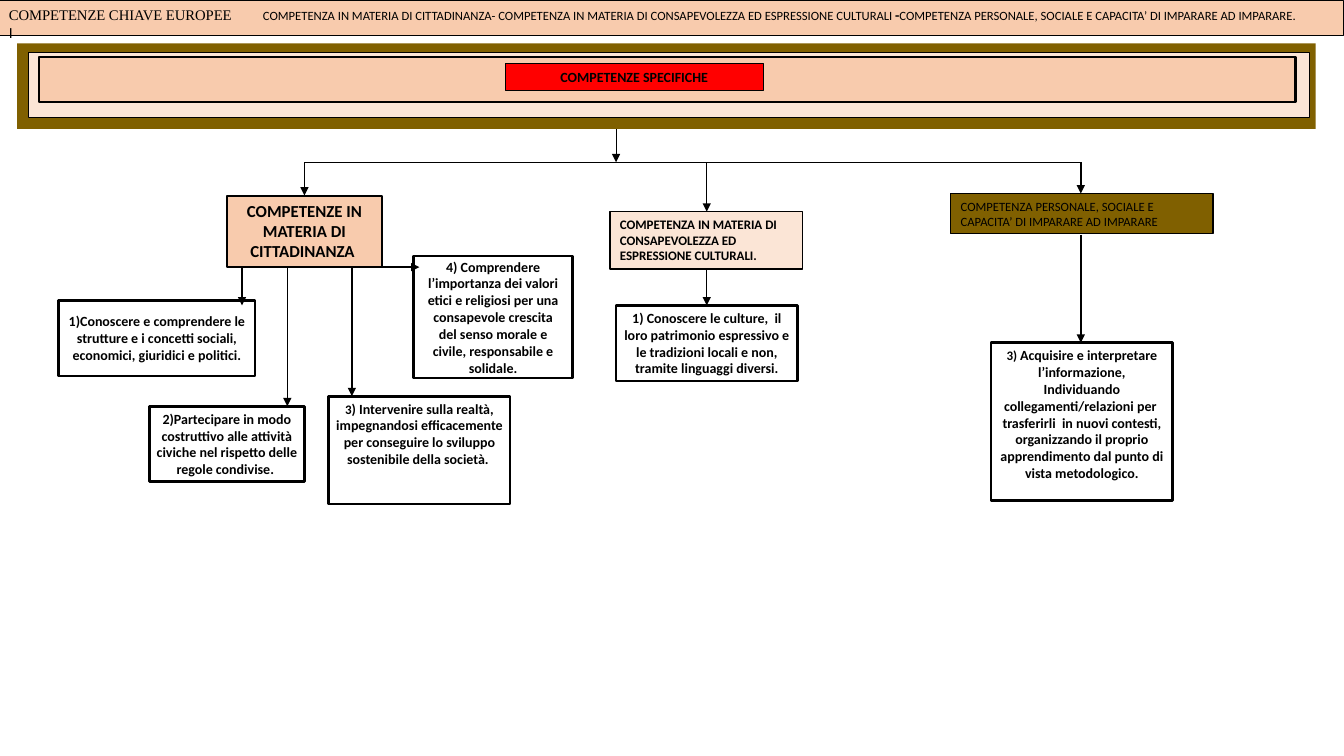
"""Build the slide mapping European key competences to specific competences."""
import pptx
import pptx.dml.color
import pptx.enum.shapes
import pptx.enum.text
import pptx.util
from lxml import etree
from pptx.oxml.ns import qn

Inches = pptx.util.Inches
ALIGN = pptx.enum.text.PP_ALIGN
ANCHOR = pptx.enum.text.MSO_ANCHOR

BLACK, WHITE, OLIVE, PEACH, CREAM, RED = "000000", "FFFFFF", "806000", "F8CBAD", "FBE5D6", "FF0000"
BOLD = {"bold": True, "size": 10}
SMALL_BOLD = {"bold": True, "size": 9.3}
PLAIN = {"size": 9}
NARROW = (0.07, 0.04)
WIDE = (0.1, 0.05)

BANNER = [
    [("COMPETENZE CHIAVE EUROPEE", {"size": 10.5, "name": "Times New Roman"}),
     ("\t", {"size": 11}),
     ("COMPETENZA IN MATERIA DI CITTADINANZA- COMPETENZA IN MATERIA DI CONSAPEVOLEZZA ED ESPRESSIONE CULTURALI", PLAIN),
     (" -", BOLD),
     ("COMPETENZA PERSONALE, SOCIALE E CAPACITA’ DI IMPARARE AD IMPARARE.", PLAIN)],
    [("I", {"size": 11})],
]
BANNER_TAB = 2.52

FRAMES = [
    ((0.17, 0.43, 12.88, 0.85), OLIVE, None),
    ((0.28, 0.52, 12.71, 0.65), CREAM, 0.75),
    ((0.39, 0.57, 12.46, 0.44), PEACH, 1.5),
]
TITLE = ((5.01, 0.63, 2.56, 0.27), RED, 0.75)
TITLE_TEXT = [[("COMPETENZE SPECIFICHE", BOLD)]]

AREAS = [
    ((2.25, 1.94, 1.54, 0.71), PEACH, 1.5, ALIGN.CENTER,
     [[("COMPETENZE IN MATERIA DI CITTADINANZA ", {"bold": True, "size": 12})]]),
    ((6.05, 2.1, 1.91, 0.57), CREAM, 1, ALIGN.LEFT,
     [[("COMPETENZA IN MATERIA DI CONSAPEVOLEZZA ED ESPRESSIONE CULTURALI.", SMALL_BOLD)]]),
    ((9.43, 1.92, 2.6, 0.4), OLIVE, 1, ALIGN.LEFT,
     [[("COMPETENZA PERSONALE, SOCIALE E CAPACITA’ DI IMPARARE AD IMPARARE", PLAIN)]]),
]

GOALS = [
    ((0.58, 2.98, 1.95, 0.75), WHITE, ANCHOR.MIDDLE, WIDE,
     [[("1)Conoscere e comprendere le strutture e i concetti sociali, economici, giuridici e politici.", BOLD)]]),
    ((1.48, 4.03, 1.54, 0.75), None, ANCHOR.TOP, NARROW,
     [[("2)Partecipare in modo costruttivo alle attività civiche nel rispetto delle regole condivise. ", BOLD)]]),
    ((3.26, 3.93, 1.8, 1.07), None, ANCHOR.TOP, NARROW,
     [[("3", SMALL_BOLD),
       (") Intervenire sulla realtà, impegnandosi efficacemente per conseguire lo sviluppo "
        "sostenibile della società. ", BOLD)]]),
    ((4.1, 2.54, 1.58, 1.21), WHITE, ANCHOR.MIDDLE, WIDE,
     [[("4) Comprendere l’importanza dei valori etici e religiosi per una consapevole crescita "
        "del senso morale e civile, responsabile e solidale.", BOLD)]]),
    ((6.11, 3.03, 1.8, 0.75), None, ANCHOR.TOP, NARROW,
     [[("1) Conoscere le culture,  il loro patrimonio espressivo e le tradizioni locali e non, "
        "tramite linguaggi diversi.", BOLD)]]),
    ((9.83, 3.4, 1.8, 1.57), None, ANCHOR.TOP, NARROW,
     [[("3) ", SMALL_BOLD), ("Acquisire e interpretare l’informazione,", BOLD)],
      [("Individuando collegamenti/relazioni per  trasferirli  in nuovi contesti,", BOLD)],
      [("organizzando il proprio apprendimento dal punto di vista metodologico.", BOLD)]]),
]

BUS, CIVIC_X, CULTURE_X, LEARNING_X, CIVIC_BOTTOM = 1.61, 3.02, 7.01, 10.72, 2.65
DROPS = [
    (6.11, 1.28, BUS, 0.5),
    (CIVIC_X, BUS, 1.94, 1),
    (CULTURE_X, BUS, 2.1, 1),
    (LEARNING_X, BUS, 1.92, 1),
    (CULTURE_X, 2.66, 3.03, 1),
    (LEARNING_X, 2.33, 3.4, 1.5),
    (2.4, CIVIC_BOTTOM, 3.03, 1.5),
    (2.85, CIVIC_BOTTOM, 4.03, 1),
    (3.49, CIVIC_BOTTOM, 3.93, 1.5),
]


def color(code):
    return pptx.dml.color.RGBColor.from_string(code)


def style_box(box, place, fill, weight):
    for name, value in zip(("left", "top", "width", "height"), place):
        setattr(box, name, Inches(value))
    box.shadow.inherit = False
    if fill:
        box.fill.solid()
        box.fill.fore_color.rgb = color(fill)
    else:
        box.fill.background()
    if weight:
        box.line.color.rgb = color(BLACK)
        box.line.width = pptx.util.Pt(weight)
    else:
        box.line.fill.background()


def add_box(page, place, fill, weight):
    box = page.shapes.add_shape(pptx.enum.shapes.MSO_SHAPE.RECTANGLE, *map(Inches, place))
    style_box(box, place, fill, weight)
    return box


def write(box, paragraphs, align=ALIGN.CENTER, anchor=ANCHOR.TOP, insets=WIDE):
    frame = box.text_frame
    side, edge = map(Inches, insets)
    settings = {"word_wrap": True, "auto_size": pptx.enum.text.MSO_AUTO_SIZE.NONE,
                "vertical_anchor": anchor, "margin_left": side, "margin_right": side,
                "margin_top": edge, "margin_bottom": edge}
    for name, value in settings.items():
        setattr(frame, name, value)
    for index, spans in enumerate(paragraphs):
        para = frame.add_paragraph() if index else frame.paragraphs[0]
        para.alignment = align
        for text, look in spans:
            span = para.add_run()
            span.text = text
            span.font.color.rgb = color(BLACK)
            for name, value in {"name": "Calibri", "bold": False, **look}.items():
                setattr(span.font, name, pptx.util.Pt(value) if name == "size" else value)


def add_line(page, start, end, weight, arrow=True):
    line = page.shapes.add_connector(pptx.enum.shapes.MSO_CONNECTOR.STRAIGHT, *map(Inches, start + end))
    line.line.color.rgb = color(BLACK)
    line.line.width = pptx.util.Pt(weight)
    properties = line.element.spPr
    if arrow:
        etree.SubElement(properties.get_or_add_ln(), qn("a:tailEnd"), type="triangle")
    etree.SubElement(properties, qn("a:effectLst"))


def main():
    deck = pptx.Presentation()
    deck.slide_width, deck.slide_height = Inches(13.33), Inches(7.5)
    page = deck.slides.add_slide(deck.slide_layouts[5])

    banner = add_box(page, (-0.01, 0, 13.33, 0.35), PEACH, 0.5)
    write(banner, BANNER, ALIGN.LEFT)
    tabs = etree.SubElement(banner.text_frame.paragraphs[0].element.get_or_add_pPr()
                            if hasattr(banner.text_frame.paragraphs[0], "element")
                            else banner.element.find(".//" + qn("a:pPr")), qn("a:tabLst"))
    etree.SubElement(tabs, qn("a:tab"), pos=str(Inches(BANNER_TAB)), algn="l")

    for frame in FRAMES:
        add_box(page, *frame)
    title = page.shapes.title
    title.element.getparent().append(title.element)
    style_box(title, *TITLE)
    write(title, TITLE_TEXT, anchor=ANCHOR.MIDDLE)

    for place, fill, weight, align, text in AREAS:
        write(add_box(page, place, fill, weight), text, align)
    for place, fill, anchor, insets, text in GOALS:
        write(add_box(page, place, fill, 2), text, anchor=anchor, insets=insets)

    add_line(page, (CIVIC_X, BUS), (LEARNING_X, BUS), 1, arrow=False)
    add_line(page, (3.79, CIVIC_BOTTOM), (4.16, CIVIC_BOTTOM), 1)
    for x, top, bottom, weight in DROPS:
        add_line(page, (x, top), (x, bottom), weight)
    deck.save("out.pptx")


if __name__ == "__main__":
    main()
